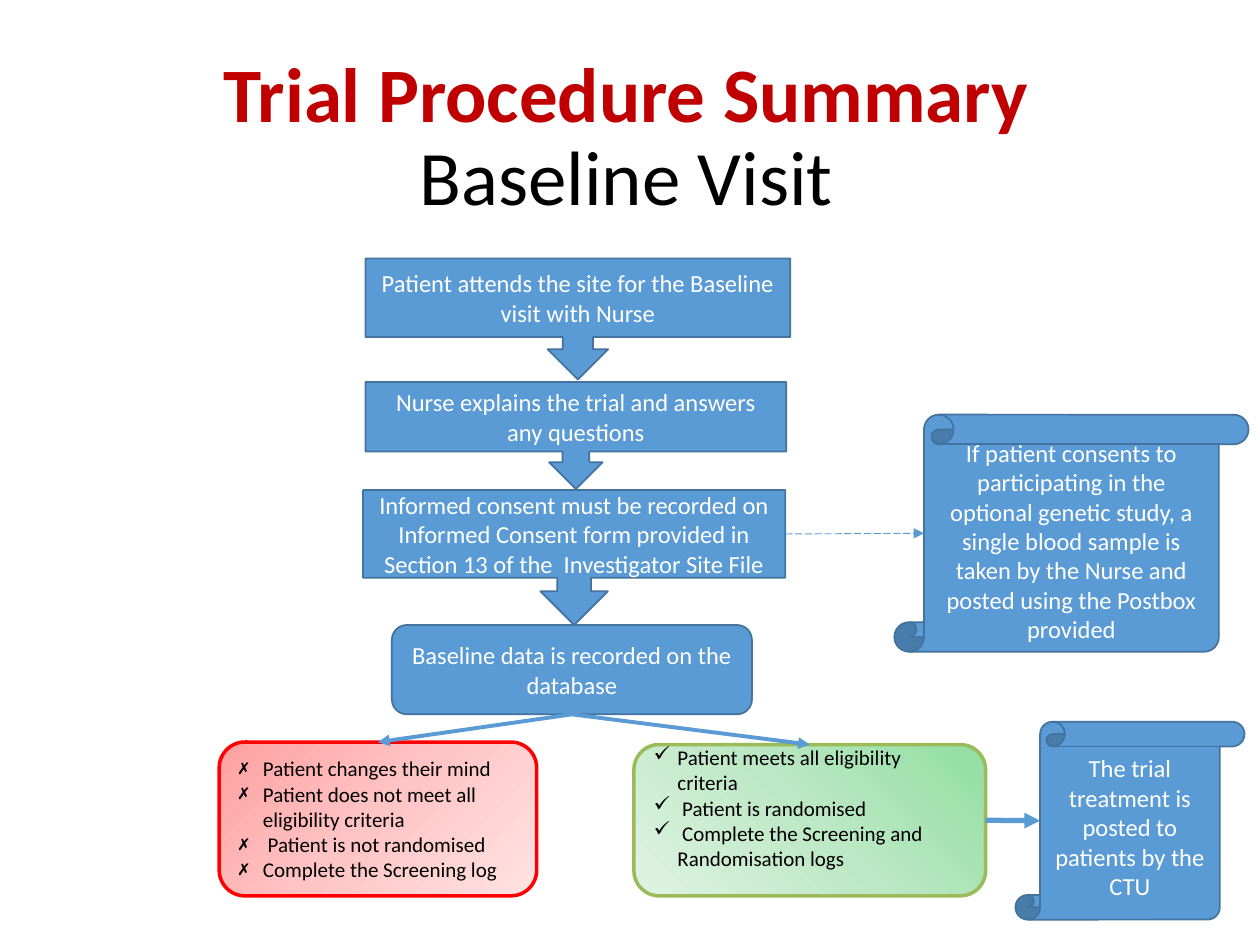
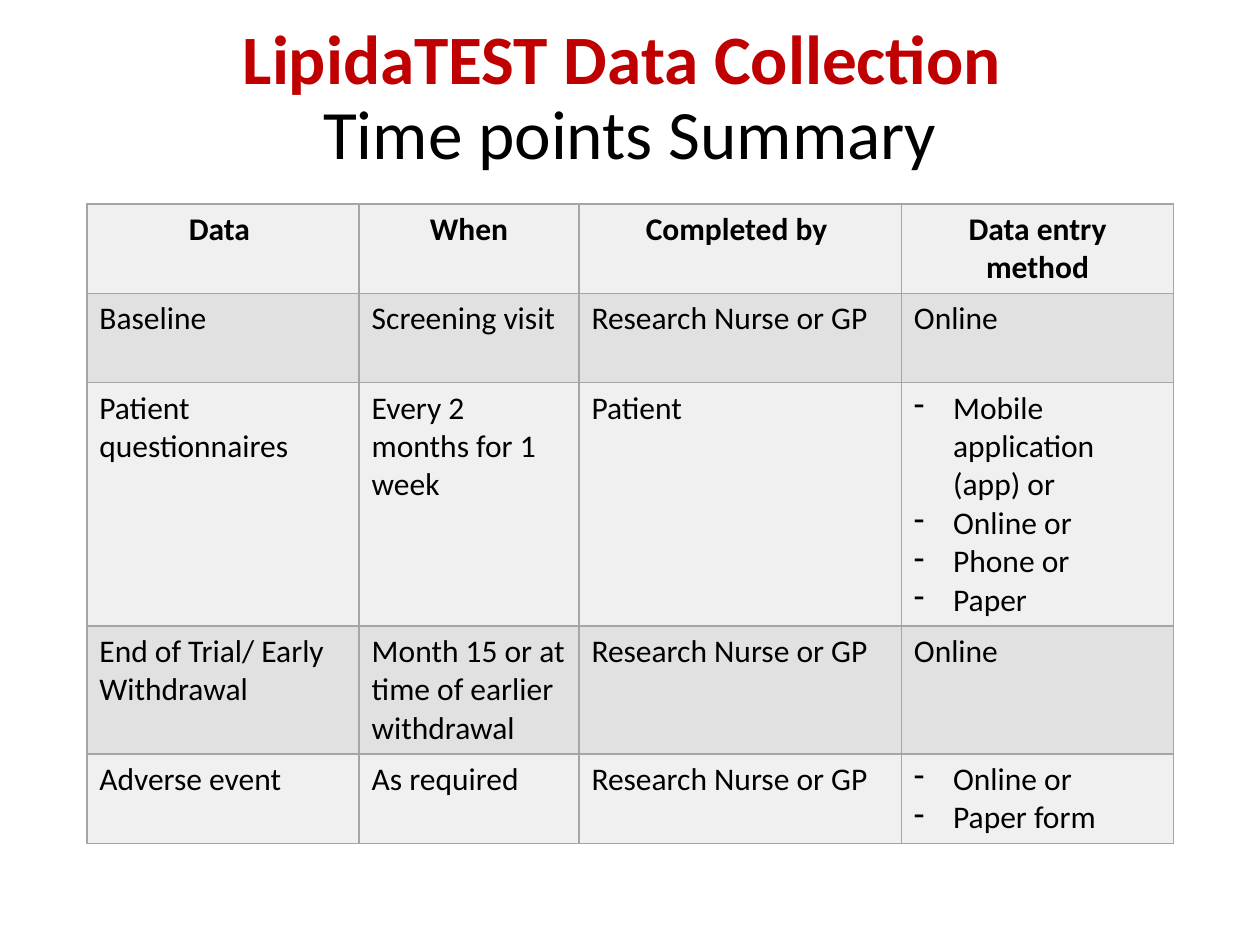
from copy import deepcopy

from lxml.etree import SubElement
from pptx import Presentation
from pptx.dml.color import RGBColor
from pptx.enum.dml import MSO_LINE
from pptx.enum.shapes import MSO_CONNECTOR, MSO_SHAPE
from pptx.enum.text import MSO_ANCHOR, MSO_AUTO_SIZE, PP_ALIGN
from pptx.oxml import parse_xml
from pptx.oxml.ns import nsdecls, qn
from pptx.util import Cm, Pt

FONT = "Calibri"
BLACK = RGBColor(0x00, 0x00, 0x00)
WHITE = RGBColor(0xFF, 0xFF, 0xFF)
TITLE_RED = RGBColor(0xC0, 0x00, 0x00)
BLUE = RGBColor(0x5B, 0x9B, 0xD5)
DARK_BLUE = RGBColor(0x43, 0x73, 0x9E)
RED = RGBColor(0xFF, 0x00, 0x00)
GREEN = RGBColor(0x9B, 0xBB, 0x59)
RED_FADE = [RGBColor(0xFF, 0xA0, 0xA0), RGBColor(0xFF, 0xC5, 0xC5), RGBColor(0xFF, 0xE3, 0xE3)]
GREEN_FADE = [RGBColor(0x91, 0xDE, 0xA0), RGBColor(0xBD, 0xE8, 0xC5), RGBColor(0xDF, 0xF3, 0xE3)]
ROW_FILLS = [RGBColor(0xF0, 0xF0, 0xF0), RGBColor(0xE1, 0xE1, 0xE1)]
BORDER = "A5A5A5"
SCROLL_CURL = 0.125
CALLOUT_BODY = 0.65

CALLOUT, ROUNDED, SCROLL = (
    MSO_SHAPE.DOWN_ARROW_CALLOUT, MSO_SHAPE.ROUNDED_RECTANGLE, MSO_SHAPE.VERTICAL_SCROLL)

BLUE_STEPS = {
    "visit": (CALLOUT, (7.37, 5.21, 8.56, 2.44),
              "Patient attends the site for the Baseline visit with Nurse"),
    "questions": (CALLOUT, (7.37, 7.7, 8.48, 2.16),
                  "Nurse explains the trial and answers any questions"),
    "consent": (CALLOUT, (7.32, 9.88, 8.51, 2.72),
                "Informed consent must be recorded on Informed Consent form provided in "
                "Section 13 of the  Investigator Site File"),
    "database": (ROUNDED, (7.9, 12.6, 7.26, 1.8), "Baseline data is recorded on the database"),
    "genetic": (SCROLL, (18.03, 8.36, 7.14, 4.78),
                "If patient consents to participating in the optional genetic study, a single "
                "blood sample is taken by the Nurse and posted using the Postbox provided"),
    "treatment": (SCROLL, (20.47, 14.55, 4.62, 3.99),
                  "The trial treatment is posted to patients by the CTU"),
}

OUTCOMES = {
    "randomised": ((12.78, 15.01, 7.09, 3.05), GREEN_FADE, 225, GREEN, "✓", [
        "Patient meets all eligibility criteria",
        "\u00a0Patient is randomised",
        "\u00a0Complete the Screening and Randomisation logs"]),
    "excluded": ((4.42, 14.96, 6.4, 3.1), RED_FADE, 315, RED, "✗", [
        "Patient changes their mind",
        "Patient does not meet all eligibility criteria",
        "\u00a0Patient is not randomised",
        "Complete the Screening log"]),
}

COLUMN_WIDTHS = [5.49, 4.43, 6.5, 5.49]
ROW_HEIGHTS = [1.8, 1.8, 4.9, 2.58, 1.8]
TIME_POINTS = [
    ["Data ", "When", "Completed by ", "Data entry method"],
    ["Baseline", "Screening visit", "Research Nurse or GP", "Online"],
    ["Patient questionnaires", "Every 2 months for 1 week", "Patient",
     ["Mobile application (app) or", "Online or", "Phone or", "Paper"]],
    ["End of Trial/ Early Withdrawal", "Month 15 or at time of earlier withdrawal",
     "Research Nurse or GP", "Online"],
    ["Adverse event", "As required", "Research Nurse or GP", ["Online or", "Paper form"]],
]


def set_font(font, size, color, bold=False):
    font.name, font.size, font.bold = FONT, Pt(size), bold
    font.color.rgb = color


def write(frame, lines, size, color, align=PP_ALIGN.LEFT, bold=False, bullet=None, indent=0):
    for index, line in enumerate(lines):
        paragraph = frame.paragraphs[0] if index == 0 else frame.add_paragraph()
        paragraph.text = line
        paragraph.alignment = align
        if bullet:
            properties = paragraph._p.get_or_add_pPr()
            properties.set("marL", str(Cm(indent)))
            properties.set("indent", str(-Cm(indent)))
            SubElement(properties, qn("a:buChar"), char=bullet)
        set_font(paragraph.font, size, color, bold)


def add_titled_slide(presentation, heading, subheading, box, size):
    slide = presentation.slides.add_slide(presentation.slide_layouts[5])
    title = slide.shapes.title
    title.left, title.top, title.width, title.height = map(Cm, box)
    frame = title.text_frame
    frame.auto_size = MSO_AUTO_SIZE.NONE
    frame.vertical_anchor = MSO_ANCHOR.MIDDLE
    paragraph = frame.paragraphs[0]
    paragraph.alignment, paragraph.line_spacing = PP_ALIGN.CENTER, 0.9
    run = paragraph.add_run()
    run.text = heading
    set_font(run.font, size, TITLE_RED, True)
    paragraph.add_line_break()
    run = paragraph.add_run()
    run.text = subheading
    set_font(run.font, size, BLACK)
    return slide


def add_box(slide, kind, box, line_color, line_width):
    shape = slide.shapes.add_shape(kind, *map(Cm, box))
    shape.shadow.inherit = False
    shape.line.color.rgb, shape.line.width = line_color, Pt(line_width)
    shape.text_frame.word_wrap = True
    shape.text_frame.vertical_anchor = MSO_ANCHOR.MIDDLE
    return shape


def add_step(slide, kind, box, text):
    shape = add_box(slide, kind, box, DARK_BLUE, 1)
    shape.fill.solid()
    shape.fill.fore_color.rgb = BLUE
    write(shape.text_frame, [text], 14, WHITE, PP_ALIGN.CENTER)
    return shape


def add_outcome(slide, box, fade, angle, line_color, bullet, lines):
    shape = add_box(slide, ROUNDED, box, line_color, 2)
    shape.fill.gradient()
    shape.fill.gradient_angle = angle
    stops = shape._element.spPr.find(".//" + qn("a:gsLst"))
    stops.append(deepcopy(stops[0]))
    for index, (stop, color) in enumerate(zip(shape.fill.gradient_stops, fade)):
        stop.position, stop.color.rgb = index / 2, color
    write(shape.text_frame, lines, 12, BLACK, bullet=bullet, indent=0.48)
    return shape


def add_arrow(slide, start, end, width, dash=None):
    arrow = slide.shapes.add_connector(MSO_CONNECTOR.STRAIGHT, *map(int, start + end))
    arrow.line.color.rgb, arrow.line.width = BLUE, Pt(width)
    if dash:
        arrow.line.dash_style = dash
    SubElement(arrow.line._get_or_add_ln(), qn("a:tailEnd"), type="triangle")
    SubElement(arrow._element.spPr, qn("a:effectLst"))


def top_middle(shape):
    return shape.left + shape.width / 2, shape.top


def bottom_middle(shape):
    return shape.left + shape.width / 2, shape.top + shape.height


def right_middle(shape, body=1):
    return shape.left + shape.width, shape.top + shape.height * body / 2


def scroll_left(shape):
    return shape.left + shape.height * SCROLL_CURL, shape.top + shape.height / 2


def build_procedure(presentation):
    slide = add_titled_slide(presentation, "Trial Procedure Summary", "Baseline Visit",
                             (1.68, 0.97, 21.9, 3.68), 44)
    steps = {name: add_step(slide, *step) for name, step in BLUE_STEPS.items()}
    outcomes = {name: add_outcome(slide, *outcome) for name, outcome in OUTCOMES.items()}
    randomised = outcomes["randomised"]
    randomised.text_frame.margin_top, randomised.text_frame.margin_bottom = 0, Cm(0.5)
    for outcome in outcomes.values():
        add_arrow(slide, bottom_middle(steps["database"]), top_middle(outcome), 2.25)
    add_arrow(slide, right_middle(steps["consent"], CALLOUT_BODY),
              scroll_left(steps["genetic"]), 0.5, MSO_LINE.LONG_DASH)
    add_arrow(slide, right_middle(randomised), scroll_left(steps["treatment"]), 3)


def set_borders(cell):
    properties = cell._tc.get_or_add_tcPr()
    for index, side in enumerate("LRTB"):
        properties.insert(index, parse_xml(
            f'<a:ln{side} {nsdecls("a")} w="{Pt(1)}"><a:solidFill>'
            f'<a:srgbClr val="{BORDER}"/></a:solidFill></a:ln{side}>'))


def build_time_points(presentation):
    slide = add_titled_slide(presentation, "LipidaTEST Data Collection ", "Time points Summary",
                             (1.75, 0.58, 21.9, 2.84), 39.6)
    table = slide.shapes.add_table(len(ROW_HEIGHTS), len(COLUMN_WIDTHS), Cm(1.75), Cm(4.11),
                                   Cm(sum(COLUMN_WIDTHS)), Cm(sum(ROW_HEIGHTS))).table
    table.first_row = table.horz_banding = False
    for column, width in zip(table.columns, COLUMN_WIDTHS):
        column.width = Cm(width)
    for row_index, (row, height) in enumerate(zip(table.rows, ROW_HEIGHTS)):
        row.height = Cm(height)
        header = row_index == 0
        for cell, content in zip(row.cells, TIME_POINTS[row_index]):
            listed = isinstance(content, list)
            write(cell.text_frame, content if listed else [content], 18, BLACK,
                  PP_ALIGN.CENTER if header else PP_ALIGN.LEFT, header,
                  "-" if listed else None, 0.79)
            cell.fill.solid()
            cell.fill.fore_color.rgb = ROW_FILLS[row_index % 2]
            set_borders(cell)


def main():
    """Build the trial procedure flowchart and the data collection table."""
    presentation = Presentation()
    presentation.slide_width, presentation.slide_height = Cm(25.4), Cm(19.05)
    build_procedure(presentation)
    build_time_points(presentation)
    presentation.save("out.pptx")


if __name__ == "__main__":
    main()
